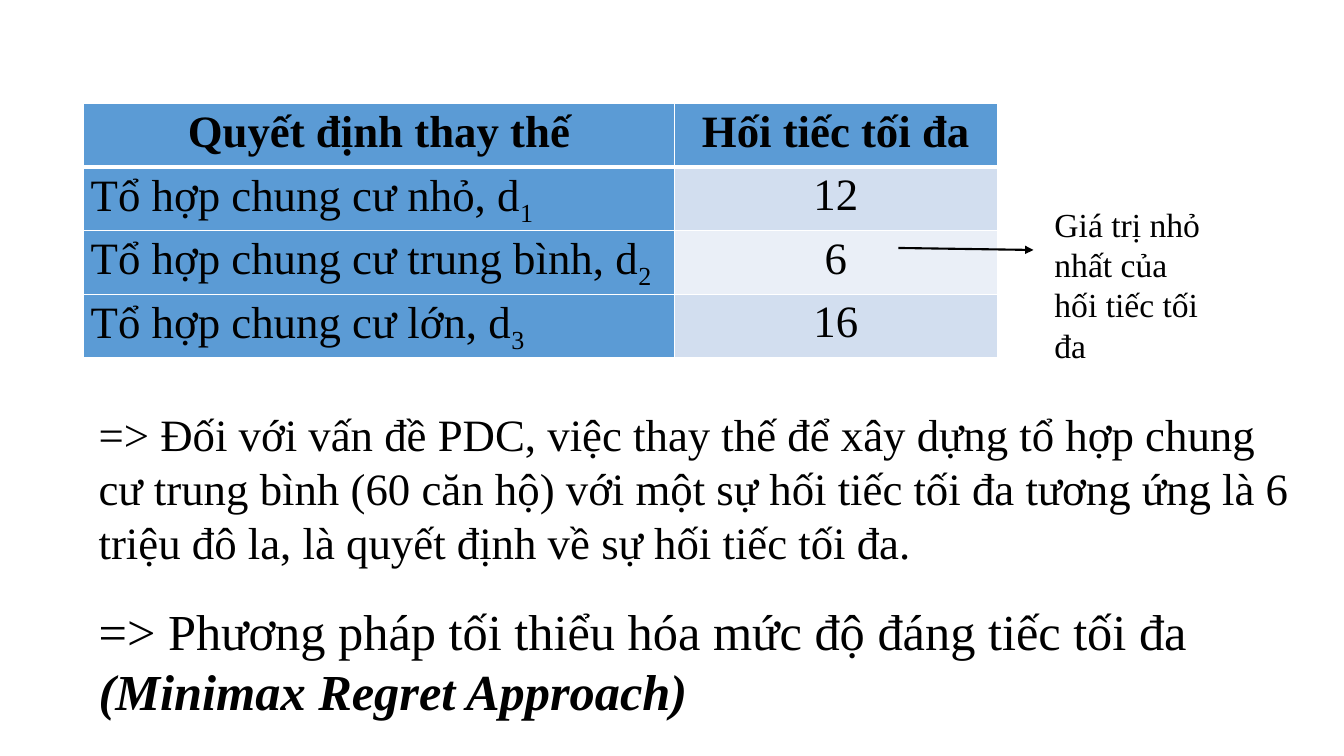
import pptx
import pptx.util
import pptx.dml.color
import pptx.enum.shapes
import pptx.enum.text
import pptx.oxml
import pptx.oxml.ns

PX = 9144  # 100 px to the inch
RGB = pptx.dml.color.RGBColor.from_string
ALIGN = pptx.enum.text.PP_ALIGN
NS = pptx.oxml.ns.nsdecls("a")
THEME = {
    "font": "Times New Roman", "ink": "000000", "rule": "FFFFFF",
    "head": "5B9BD5", "bands": ["D2DEEF", "EAEFF7"],
    "note": 24, "body": 32, "method": 36,
}


def style(run, size, bold=False):
    run.font.name = THEME["font"]
    run.font.size = pptx.util.Pt(size)
    run.font.bold = bold
    run.font.color.rgb = RGB(THEME["ink"])


def add_text(left, top, width, height, size, text):
    box = slide.shapes.add_textbox(left * PX, top * PX, width * PX, height * PX)
    box.text_frame.word_wrap = True
    box.text_frame.text = text
    para = box.text_frame.paragraphs[0]
    style(para.runs[0], size)
    return para


deck = pptx.Presentation()
deck.slide_width, deck.slide_height = 1333 * PX, 750 * PX
slide = deck.slides.add_slide(deck.slide_layouts[6])

# Regret table: the trailing digit of each option is a subscript
rows = [
    ("Quyết định thay thế", "", "Hối tiếc tối đa"),
    ("Tổ hợp chung cư nhỏ, d", "1", "12"),
    ("Tổ hợp chung cư trung bình, d", "2", "6"),
    ("Tổ hợp chung cư lớn, d", "3", "16"),
]
table = slide.shapes.add_table(len(rows), 2, 83 * PX, 103 * PX, 906 * PX, 252 * PX).table
table.first_col = True
for col, width in zip(table.columns, (586, 320)):
    col.width = width * PX
for r, (option, index, regret) in enumerate(rows):
    table.rows[r].height = 63 * PX
    for c, text in enumerate((option, regret)):
        cell = table.cell(r, c)
        cell.margin_left = cell.margin_right = 7 * PX
        cell.margin_top = cell.margin_bottom = 0
        for side in "LRTB":
            thick = (r == 0 and side == "B") or (r == 1 and side == "T")
            width = pptx.util.Pt(3 if thick else 1)
            cell._tc.get_or_add_tcPr().append(pptx.oxml.parse_xml(
                f'<a:ln{side} {NS} w="{width}"><a:solidFill>'
                f'<a:srgbClr val="{THEME["rule"]}"/></a:solidFill></a:ln{side}>'))
        cell.fill.solid()
        band = THEME["bands"][(r - 1) % 2]
        cell.fill.fore_color.rgb = RGB(THEME["head"] if r == 0 or c == 0 else band)
        cell.text_frame.text = text
        para = cell.text_frame.paragraphs[0]
        para.line_spacing = 1.07
        para.alignment = ALIGN.CENTER if r == 0 or c == 1 else ALIGN.LEFT
        if c == 0 and index:
            para.add_run().text = index
        for run in para.runs:
            style(run, THEME["body"], bold=r == 0)
        if c == 0 and index:
            para.runs[1].font._element.set("baseline", "-25000")

# Arrow from the smallest regret to its note
arrow = slide.shapes.add_connector(
    pptx.enum.shapes.MSO_CONNECTOR.STRAIGHT, 891 * PX, 246 * PX, 1025 * PX, 248 * PX)
arrow.line.color.rgb = RGB(THEME["ink"])
arrow.line.width = pptx.util.Pt(1.5)
arrow.line._get_or_add_ln().append(
    pptx.oxml.parse_xml(f'<a:tailEnd {NS} type="triangle"/>'))
arrow._element.spPr.append(pptx.oxml.parse_xml(f"<a:effectLst {NS}/>"))

add_text(1036, 197, 177, 172, THEME["note"], "Giá trị nhỏ nhất của hối tiếc tối đa")
add_text(88, 399, 1209, 172, THEME["body"],
         "=> Đối với vấn đề PDC, việc thay thế để xây dựng tổ hợp chung cư trung bình "
         "(60 căn hộ) với một sự hối tiếc tối đa tương ứng là 6 triệu đô la, "
         "là quyết định về sự hối tiếc tối đa.")
method = add_text(88, 590, 1245, 131, THEME["method"],
                  "=> Phương pháp tối thiểu hóa mức độ đáng tiếc tối đa ")
term = method.add_run()
term.text = "(Minimax Regret Approach)"
style(term, THEME["method"], bold=True)
term.font.italic = True

deck.save("out.pptx")
